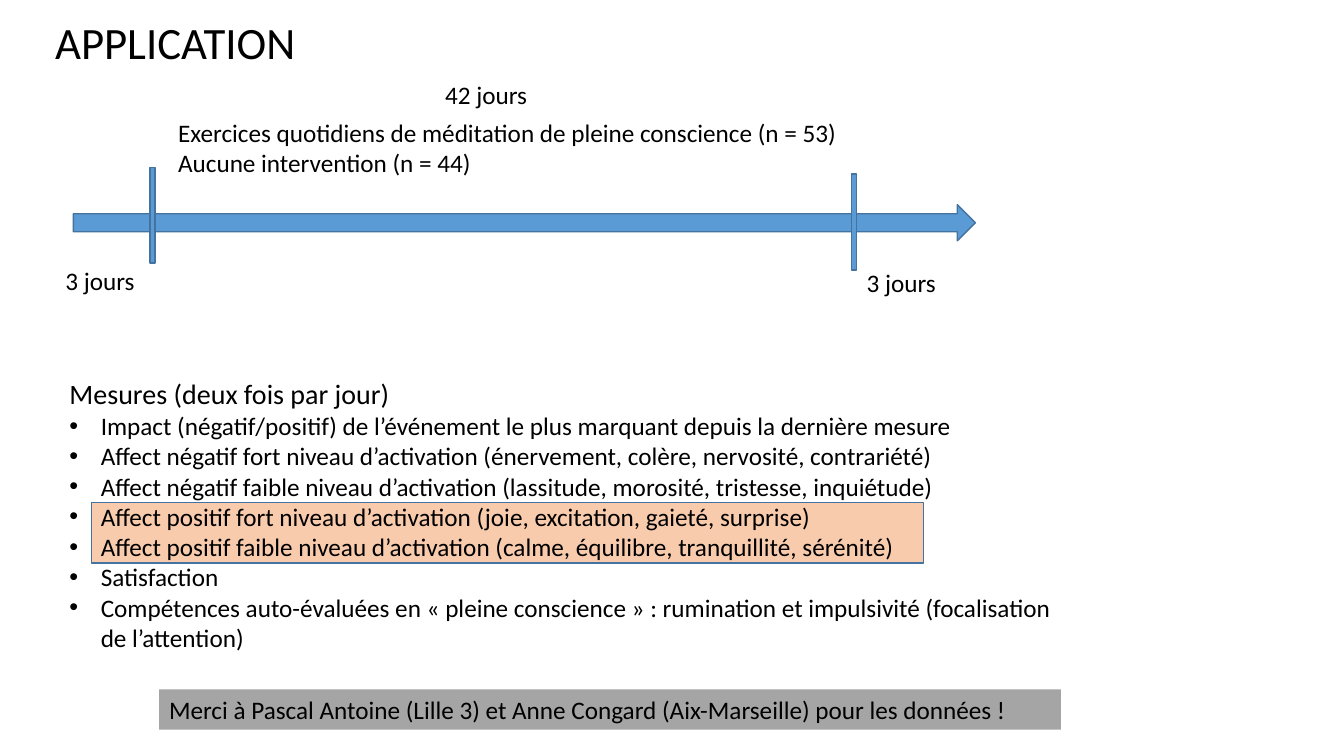
from dataclasses import dataclass
from lxml.etree import SubElement
from pptx import Presentation
from pptx.dml.color import RGBColor
from pptx.enum.shapes import MSO_SHAPE
from pptx.enum.text import MSO_ANCHOR, MSO_AUTO_SIZE, PP_ALIGN
from pptx.oxml.ns import qn
from pptx.util import Cm, Pt


@dataclass
class Theme:
    font: str = "Calibri"
    ink: str = "000000"
    blue: str = "5B9BD5"
    edge: str = "43739E"
    peach: str = "F8CBAD"
    gray: str = "A5A5A5"
    title: int = 32
    head: int = 20
    body: int = 18


theme = Theme()
deck = Presentation()
deck.slide_width, deck.slide_height = Cm(33.87), Cm(19.05)
slide = deck.slides.add_slide(deck.slide_layouts[6])


def draw(kind, box, fill, edge=None):
    shape = slide.shapes.add_shape(kind, *map(Cm, box))
    shape.shadow.inherit = False
    shape.fill.solid()
    shape.fill.fore_color.rgb = RGBColor.from_string(fill)
    if edge:
        shape.line.color.rgb = RGBColor.from_string(edge)
        shape.line.width = Pt(1)
    else:
        shape.line.fill.background()
    return shape


def write(shape, lines, size=theme.body, wrap=True):
    frame = shape.text_frame
    frame.word_wrap = wrap
    frame.auto_size = MSO_AUTO_SIZE.SHAPE_TO_FIT_TEXT
    frame.vertical_anchor = MSO_ANCHOR.TOP
    for i, line in enumerate(lines):
        para = frame.add_paragraph() if i else frame.paragraphs[0]
        para.alignment = PP_ALIGN.LEFT
        run = para.add_run()
        run.text = line
        run.font.name = theme.font
        run.font.size = Pt(size)
        run.font.color.rgb = RGBColor.from_string(theme.ink)
    return frame


draw(MSO_SHAPE.RECTANGLE, (2.31, 12.67, 20.96, 1.52), theme.peach, theme.edge)
draw(MSO_SHAPE.RIGHT_ARROW, (1.85, 5.16, 22.73, 0.91), theme.blue, theme.edge)
for left, top in [(3.78, 4.22), (21.46, 4.39)]:
    draw(MSO_SHAPE.FLOWCHART_PROCESS, (left, top, 0.13, 2.41), theme.blue, theme.edge)

labels = [
    ((1.14, 0.25, 12.4, 1.63), ["APPLICATION"], theme.title, True),
    ((10.97, 1.88, 2.9, 1.02), ["42 jours"], theme.body, True),
    ((1.4, 6.55, 2.26, 1.02), ["3 jours"], theme.body, False),
    ((21.59, 6.6, 2.26, 1.02), ["3 jours"], theme.body, False),
    ((4.24, 2.82, 17.6, 1.8), [
        "Exercices quotidiens de méditation de pleine conscience (n = 53)",
        "Aucune intervention (n = 44)",
    ], theme.body, True),
]
for box, lines, size, wrap in labels:
    write(slide.shapes.add_textbox(*map(Cm, box)), lines, size, wrap)

tests = [
    "Mesures (deux fois par jour)",
    "Impact (négatif/positif) de l’événement le plus marquant depuis la dernière mesure",
    "Affect négatif fort niveau d’activation (énervement, colère, nervosité, contrariété)",
    "Affect négatif faible niveau d’activation (lassitude, morosité, tristesse, inquiétude)",
    "Affect positif fort niveau d’activation (joie, excitation, gaieté, surprise)",
    "Affect positif faible niveau d’activation (calme, équilibre, tranquillité, sérénité)",
    "Satisfaction",
    "Compétences auto-évaluées en « pleine conscience » : rumination et impulsivité "
    "(focalisation de l’attention)",
]
box = slide.shapes.add_textbox(Cm(1.5), Cm(9.37), Cm(25.27), Cm(7.26))
head, *items = write(box, tests).paragraphs
head.runs[0].font.size = Pt(theme.head)
for item in items:
    props = item._p.get_or_add_pPr()
    props.set("marL", str(Cm(0.79)))
    props.set("indent", str(-Cm(0.79)))
    SubElement(props, qn("a:buFont"), typeface="Arial")
    SubElement(props, qn("a:buChar"), char="•")

thanks = draw(MSO_SHAPE.RECTANGLE, (4.01, 17.37, 22.73, 1.02), theme.gray)
write(thanks, ["Merci à Pascal Antoine (Lille 3) et Anne Congard (Aix-Marseille) pour les données !"])

deck.save("out.pptx")
